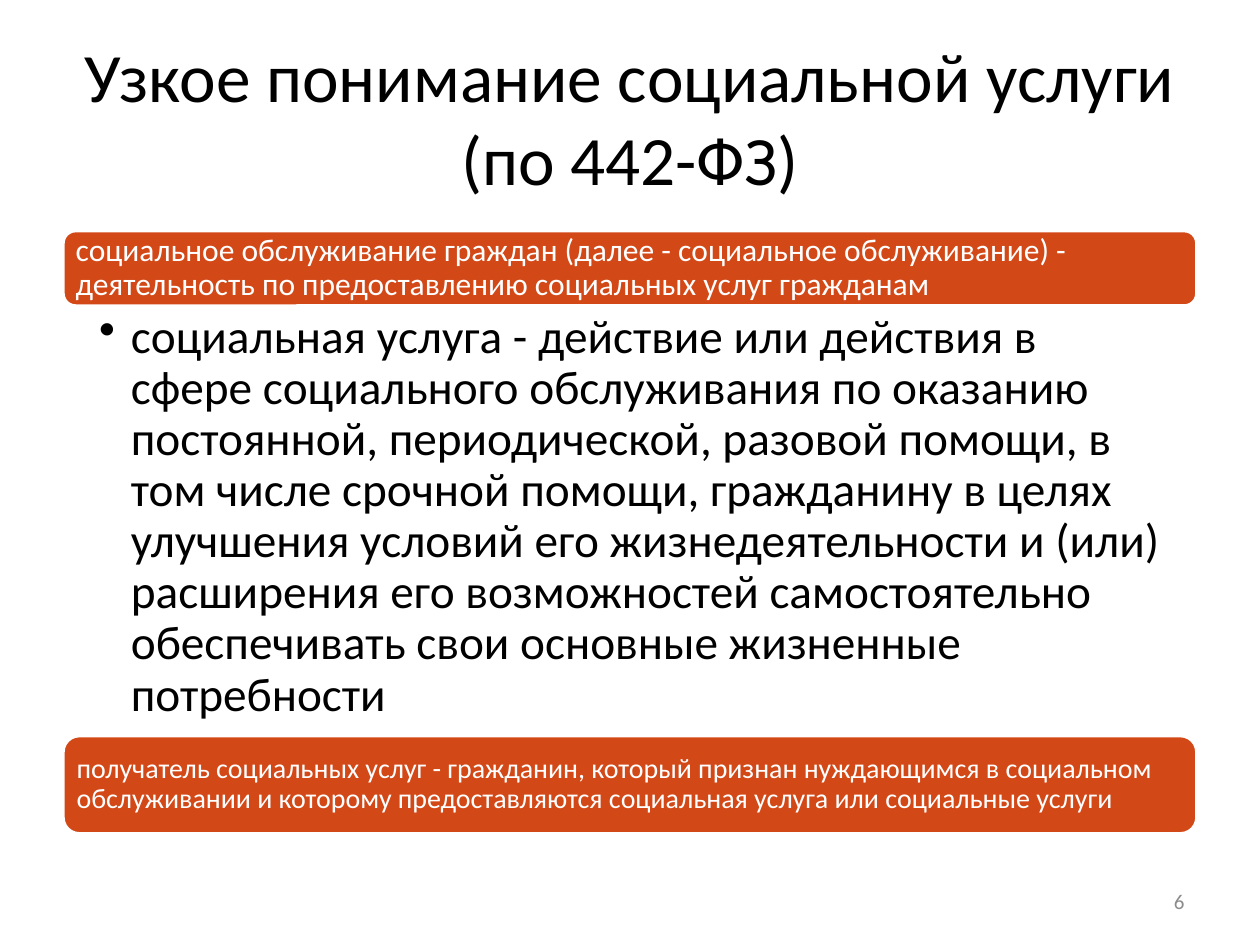
from dataclasses import dataclass

from pptx import Presentation
from pptx import util as u
from pptx.dml.color import RGBColor
from pptx.enum import shapes, text
from pptx.oxml.xmlchemy import OxmlElement


@dataclass(frozen=True)
class Theme:
    font: str = "Calibri"
    dark: str = "000000"
    light: str = "FFFFFF"
    accent: str = "D34817"
    muted: str = "8C8C8C"
    title: float = 39.6
    body: float = 27
    lead: float = 18
    note: float = 16
    page: float = 12


def write(shape, words, size, color, font, align=text.PP_ALIGN.LEFT,
          anchor=text.MSO_ANCHOR.MIDDLE, pads=(0.25, 0.13, 0.25, 0.13),
          spacing=1.0, indent=0):
    """Fill a shape with one paragraph; a positive indent adds a bullet."""
    frame = shape.text_frame
    frame.word_wrap = True
    frame.vertical_anchor = anchor
    (frame.margin_left, frame.margin_top,
     frame.margin_right, frame.margin_bottom) = map(u.Cm, pads)
    para = frame.paragraphs[0]
    para.alignment = align
    para.line_spacing = spacing
    run = para.add_run()
    run.text = words
    run.font.name = font
    run.font.size = u.Pt(size)
    run.font.color.rgb = RGBColor.from_string(color)
    if indent:
        props = para._p.get_or_add_pPr()
        props.set("marL", str(u.Cm(indent)))
        props.set("indent", str(-u.Cm(indent)))
        bullet = OxmlElement("a:buChar")
        bullet.set("char", "•")
        props.append(bullet)


class Deck:
    def __init__(self, theme):
        self.theme = theme
        self.file = Presentation()
        self.file.slide_width = u.Cm(25.4)
        self.file.slide_height = u.Cm(19.05)
        self.slide = self.file.slides.add_slide(self.file.slide_layouts[6])

    def label(self, box, words, size, color, **style):
        shape = self.slide.shapes.add_textbox(*map(u.Cm, box))
        write(shape, words, size, color, self.theme.font, **style)

    def bar(self, box, words, size):
        shape = self.slide.shapes.add_shape(
            shapes.MSO_SHAPE.ROUNDED_RECTANGLE, *map(u.Cm, box))
        shape.shadow.inherit = False
        shape.fill.solid()
        shape.fill.fore_color.rgb = RGBColor.from_string(self.theme.accent)
        shape.line.color.rgb = RGBColor.from_string(self.theme.light)
        shape.line.width = u.Pt(2)
        write(shape, words, size, self.theme.light, self.theme.font,
              pads=(0.18,) * 4, spacing=0.9)


def main():
    theme = Theme()
    deck = Deck(theme)
    left, width = 1.27, 22.86

    # Title
    deck.label((left, 0.76, width, 3.18),
               "Узкое понимание социальной услуги (по 442-ФЗ)",
               theme.title, theme.dark, align=text.PP_ALIGN.CENTER)

    # Stack: bar, bulleted definition, bar
    top, lead, body, note = 4.65, 1.52, 8.66, 1.98
    deck.bar((left, top, width, lead),
             "социальное обслуживание граждан (далее - социальное "
             "обслуживание) - деятельность по предоставлению социальных "
             "услуг гражданам", theme.lead)
    top += lead
    deck.label((left, top, width, body),
               "социальная услуга - действие или действия в сфере социального "
               "обслуживания по оказанию постоянной, периодической, разовой "
               "помощи, в том числе срочной помощи, гражданину в целях "
               "улучшения условий его жизнедеятельности и (или) расширения "
               "его возможностей самостоятельно обеспечивать свои основные "
               "жизненные потребности", theme.body, theme.dark,
               anchor=text.MSO_ANCHOR.TOP, pads=(0.73, 0.13, 0.68, 0.13),
               spacing=0.9, indent=0.64)
    top += body
    deck.bar((left, top, width, note),
             "получатель социальных услуг - гражданин, который признан "
             "нуждающимся в социальном обслуживании и которому "
             "предоставляются социальная услуга или социальные услуги",
             theme.note)

    # Page number
    deck.label((18.21, 17.65, 5.92, 1.02), "6", theme.page, theme.muted,
               align=text.PP_ALIGN.RIGHT)

    deck.file.save("out.pptx")


if __name__ == "__main__":
    main()
